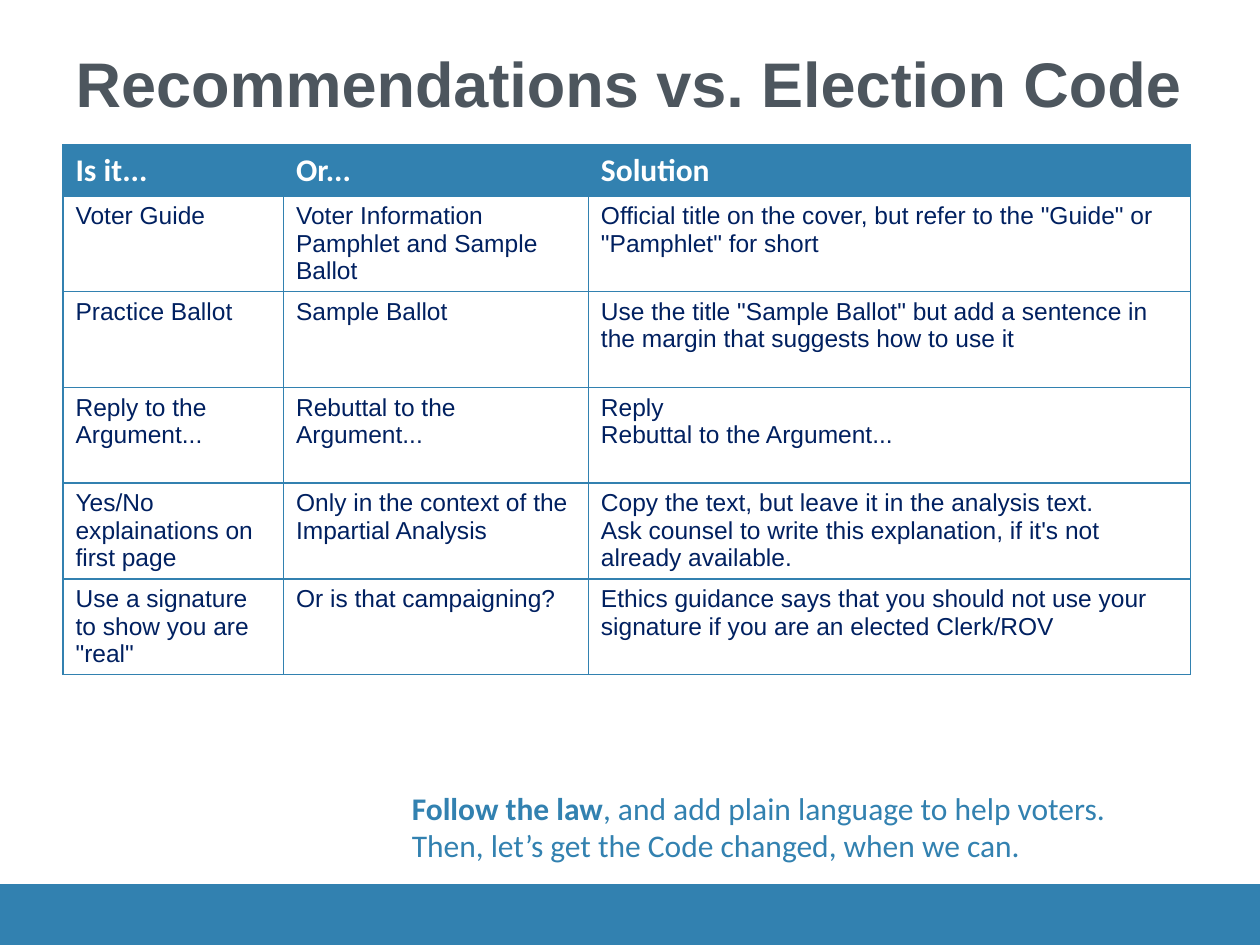
from lxml.etree import SubElement
from pptx import Presentation
from pptx.dml.color import RGBColor
from pptx.enum.shapes import MSO_SHAPE
from pptx.enum.text import MSO_ANCHOR, PP_ALIGN
from pptx.oxml.ns import qn
from pptx.util import Inches, Pt

BLUE = RGBColor(0x32, 0x81, 0xB0)
NAVY = RGBColor(0x00, 0x20, 0x60)
GRAY = RGBColor(0x4D, 0x56, 0x5E)
WHITE = RGBColor(0xFF, 0xFF, 0xFF)

TITLE = "Recommendations vs. Election Code"
ROWS = [
    ("Is it...", "Or...", "Solution"),
    ("Voter Guide", "Voter Information Pamphlet and Sample Ballot",
     'Official title on the cover, but refer to the "Guide" or "Pamphlet" for short'),
    ("Practice Ballot", "Sample Ballot",
     'Use the title "Sample Ballot" but add a sentence in the margin that suggests how to use it'),
    ("Reply to the Argument...", "Rebuttal to the Argument...",
     "Reply\nRebuttal to the Argument..."),
    ("Yes/No explainations on first page", "Only in the context of the Impartial Analysis",
     "Copy the text, but leave it in the analysis text.\n"
     "Ask counsel to write this explanation, if it's not already available."),
    ('Use a signature to show you are "real"', "Or is that campaigning?",
     "Ethics guidance says that you should not use your signature if you are an elected Clerk/ROV"),
]
COLUMN_WIDTHS = (1.75, 2.42, 4.78)
ROW_HEIGHTS = [0.4] + [0.76] * (len(ROWS) - 1)
CLOSING = [
    [("Follow the law", True), (", and add plain language to help voters.", False)],
    [("Then, let’s get the Code changed, when we can.", False)],
]


def set_font(font, name, size, color, bold=False):
    font.name = name
    font.size = Pt(size)
    font.bold = bold
    font.color.rgb = color


def add_borders(cell):
    properties = cell._tc.get_or_add_tcPr()
    for index, side in enumerate(("lnL", "lnR", "lnT", "lnB")):
        line = properties.makeelement(qn(f"a:{side}"), {"w": str(Pt(1))})
        fill = SubElement(line, qn("a:solidFill"))
        SubElement(fill, qn("a:srgbClr"), val=str(BLUE))
        properties.insert(index, line)


def add_title(page):
    title = page.shapes.title
    title.left, title.top = Inches(0.5), Inches(0.3)
    title.width, title.height = Inches(9), Inches(1.25)
    title.text_frame.vertical_anchor = MSO_ANCHOR.TOP
    title.text_frame.text = TITLE
    para = title.text_frame.paragraphs[0]
    para.alignment = PP_ALIGN.LEFT
    set_font(para.font, "Arial", 36, GRAY, True)


def add_comparison(page):
    table = page.shapes.add_table(
        len(ROWS), len(COLUMN_WIDTHS), Inches(0.5), Inches(1.15),
        Inches(sum(COLUMN_WIDTHS)), Inches(sum(ROW_HEIGHTS))).table
    table.horz_banding = False
    for column, width in zip(table.columns, COLUMN_WIDTHS):
        column.width = Inches(width)
    for row, height, texts in zip(table.rows, ROW_HEIGHTS, ROWS):
        row.height = Inches(height)
        is_header = texts is ROWS[0]
        for cell, text in zip(row.cells, texts):
            cell.text = text
            if is_header:
                cell.fill.solid()
                cell.fill.fore_color.rgb = BLUE
            else:
                cell.fill.background()
            add_borders(cell)
            for para in cell.text_frame.paragraphs:
                if is_header:
                    set_font(para.font, "Calibri", 18, WHITE, True)
                else:
                    set_font(para.font, "Arial", 14, NAVY)


def add_closing(page):
    box = page.shapes.add_textbox(Inches(3.17), Inches(6.21), Inches(6.33), Inches(0.71))
    frame = box.text_frame
    frame.word_wrap = True
    for index, spans in enumerate(CLOSING):
        para = frame.add_paragraph() if index else frame.paragraphs[0]
        set_font(para.font, "Calibri", 18, BLUE)
        for text, bold in spans:
            span = para.add_run()
            span.text = text
            span.font.bold = bold


def add_footer_bar(page):
    bar = page.shapes.add_shape(
        MSO_SHAPE.RECTANGLE, Inches(0), Inches(7.02), Inches(10), Inches(0.48))
    bar.shadow.inherit = False
    bar.fill.solid()
    bar.fill.fore_color.rgb = BLUE
    bar.line.color.rgb = BLUE
    bar.line.width = Pt(0.75)


def main():
    deck = Presentation()
    deck.slide_width, deck.slide_height = Inches(10), Inches(7.5)
    page = deck.slides.add_slide(deck.slide_layouts[5])
    add_footer_bar(page)
    add_title(page)
    add_comparison(page)
    add_closing(page)
    deck.save("out.pptx")


if __name__ == "__main__":
    main()
